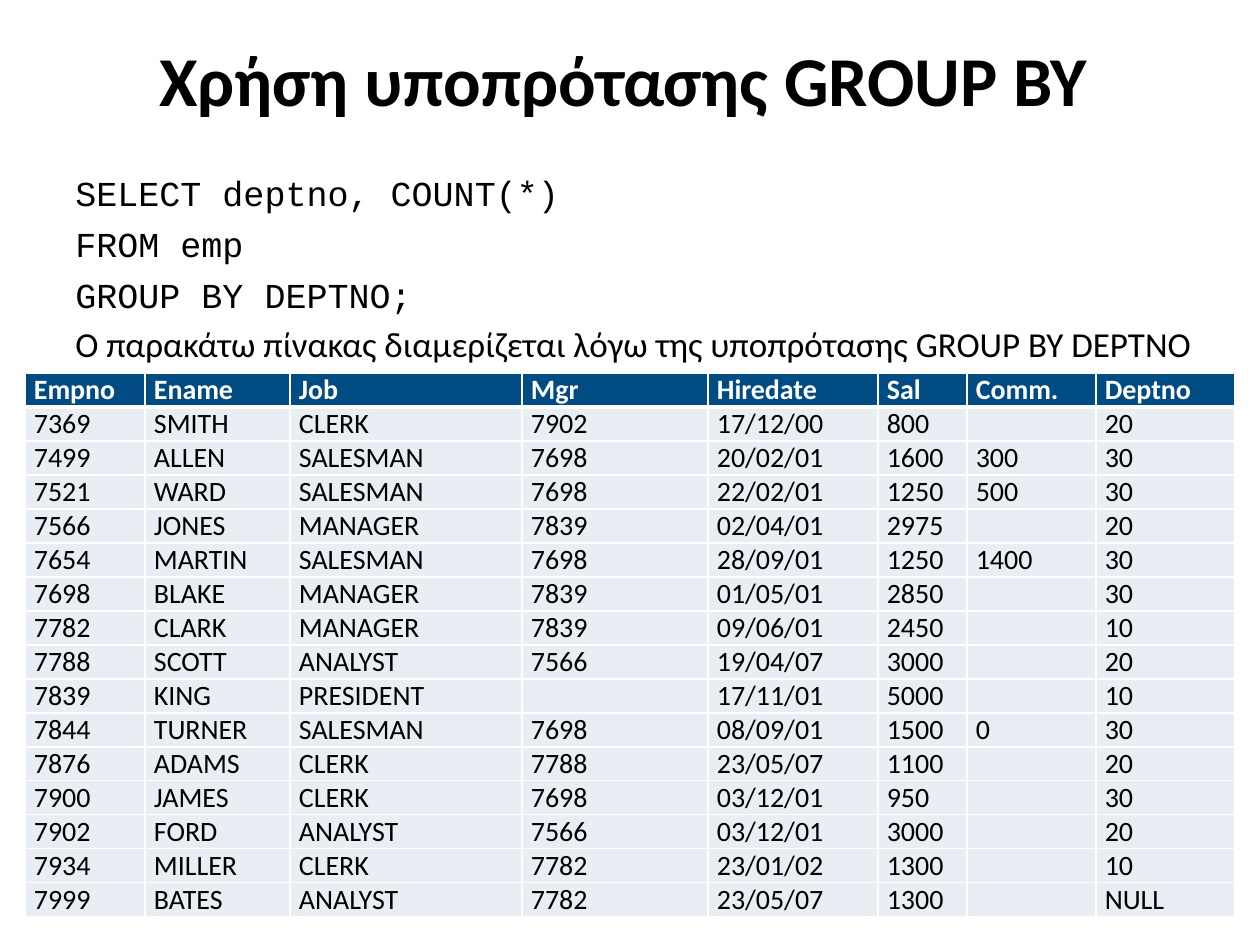
import dataclasses
import lxml.etree
import pptx
import pptx.dml.color
import pptx.enum.text
import pptx.oxml.ns
import pptx.util

SCALE = 914400 / 126


@dataclasses.dataclass(frozen=True)
class Theme:
    ink: str = "000000"
    pale: str = "FFFFFF"
    head: str = "004B82"
    body: str = "E9EDF4"
    sans: str = "Calibri"
    mono: str = "Courier New"
    title: int = 40
    text: int = 20
    cell: int = 16
    thin: int = 1
    thick: int = 3


THEME = Theme()

TITLE = "Χρήση υποπρότασης GROUP BY "
CODE = ["SELECT deptno, COUNT(*)", "FROM emp", "GROUP BY DEPTNO;"]
NOTE = "Ο παρακάτω πίνακας διαμερίζεται λόγω της υποπρότασης GROUP BY DEPTNO"

WIDTHS = [120, 145, 232, 186, 170, 89, 129, 139]
ROW = 34
STAFF = """Empno,Ename,Job,Mgr,Hiredate,Sal,Comm.,Deptno
7369,SMITH,CLERK,7902,17/12/00,800,,20
7499,ALLEN,SALESMAN,7698,20/02/01,1600,300,30
7521,WARD,SALESMAN,7698,22/02/01,1250,500,30
7566,JONES,MANAGER,7839,02/04/01,2975,,20
7654,MARTIN,SALESMAN,7698,28/09/01,1250,1400,30
7698,BLAKE,MANAGER,7839,01/05/01,2850,,30
7782,CLARK,MANAGER,7839,09/06/01,2450,,10
7788,SCOTT,ANALYST,7566,19/04/07,3000,,20
7839,KING,PRESIDENT,,17/11/01,5000,,10
7844,TURNER,SALESMAN,7698,08/09/01,1500,0,30
7876,ADAMS,CLERK,7788,23/05/07,1100,,20
7900,JAMES,CLERK,7698,03/12/01,950,,30
7902,FORD,ANALYST,7566,03/12/01,3000,,20
7934,MILLER,CLERK,7782,23/01/02,1300,,10
7999,BATES,ANALYST,7782,23/05/07,1300,,NULL"""


def px(count):
    return pptx.util.Emu(round(count * SCALE))


def color(code):
    return pptx.dml.color.RGBColor.from_string(code)


def style(para, size, face, ink, bold=False):
    font = para.font
    font.size = pptx.util.Pt(size)
    font.name = face
    font.bold = bold
    font.color.rgb = color(ink)


def add_box(slide, box):
    frame = slide.shapes.add_textbox(*map(px, box)).text_frame
    frame.word_wrap = True
    return frame


def add_title(slide, box):
    frame = add_box(slide, box)
    frame.vertical_anchor = pptx.enum.text.MSO_ANCHOR.MIDDLE
    para = frame.paragraphs[0]
    para.text = TITLE
    para.alignment = pptx.enum.text.PP_ALIGN.CENTER
    style(para, THEME.title, THEME.sans, THEME.ink, True)


def add_query(slide, box):
    frame = add_box(slide, box)
    frame.text = "\n".join(CODE + [NOTE])
    for para in frame.paragraphs:
        style(para, THEME.text, THEME.mono, THEME.ink)
        para.space_before = pptx.util.Pt(5.3)
    para.font.name = THEME.sans
    para.space_before = pptx.util.Pt(4)


def add_edges(cell, top, base):
    props = cell._tc.get_or_add_tcPr()
    edges = {"L": THEME.thin, "R": THEME.thin, "T": top, "B": base}
    for spot, (side, width) in enumerate(edges.items()):
        line = lxml.etree.Element(
            pptx.oxml.ns.qn("a:ln" + side), w=str(pptx.util.Pt(width)))
        fill = lxml.etree.SubElement(line, pptx.oxml.ns.qn("a:solidFill"))
        lxml.etree.SubElement(fill, pptx.oxml.ns.qn("a:srgbClr"), val=THEME.pale)
        props.insert(spot, line)


def fill_cell(cell, text, row):
    head = row == 0
    cell.margin_left = cell.margin_right = px(9)
    cell.margin_top = cell.margin_bottom = 0
    cell.fill.solid()
    cell.fill.fore_color.rgb = color(THEME.head if head else THEME.body)
    para = cell.text_frame.paragraphs[0]
    para.text = text
    style(para, THEME.cell, THEME.sans, THEME.pale if head else THEME.ink, head)
    if not text:
        lxml.etree.SubElement(
            para._p, pptx.oxml.ns.qn("a:endParaRPr"), sz=str(THEME.cell * 100))
    add_edges(cell, THEME.thick if row == 1 else THEME.thin,
              THEME.thick if head else THEME.thin)


def add_staff(slide, left, top):
    rows = [line.split(",") for line in STAFF.splitlines()]
    box = (left, top, sum(WIDTHS), ROW * len(rows))
    table = slide.shapes.add_table(len(rows), len(WIDTHS), *map(px, box)).table
    table.horz_banding = False
    for column, width in zip(table.columns, WIDTHS):
        column.width = px(width)
    for row, texts in enumerate(rows):
        table.rows[row].height = px(ROW)
        for col, text in enumerate(texts):
            fill_cell(table.cell(row, col), text, row)


def main():
    deck = pptx.Presentation()
    deck.slide_width, deck.slide_height = px(1260), px(945)
    slide = deck.slides.add_slide(deck.slide_layouts[6])
    add_title(slide, (64, 16, 1134, 125))
    add_query(slide, (63, 165, 1197, 218))
    add_staff(slide, 25, 373)
    deck.save("out.pptx")


if __name__ == "__main__":
    main()
